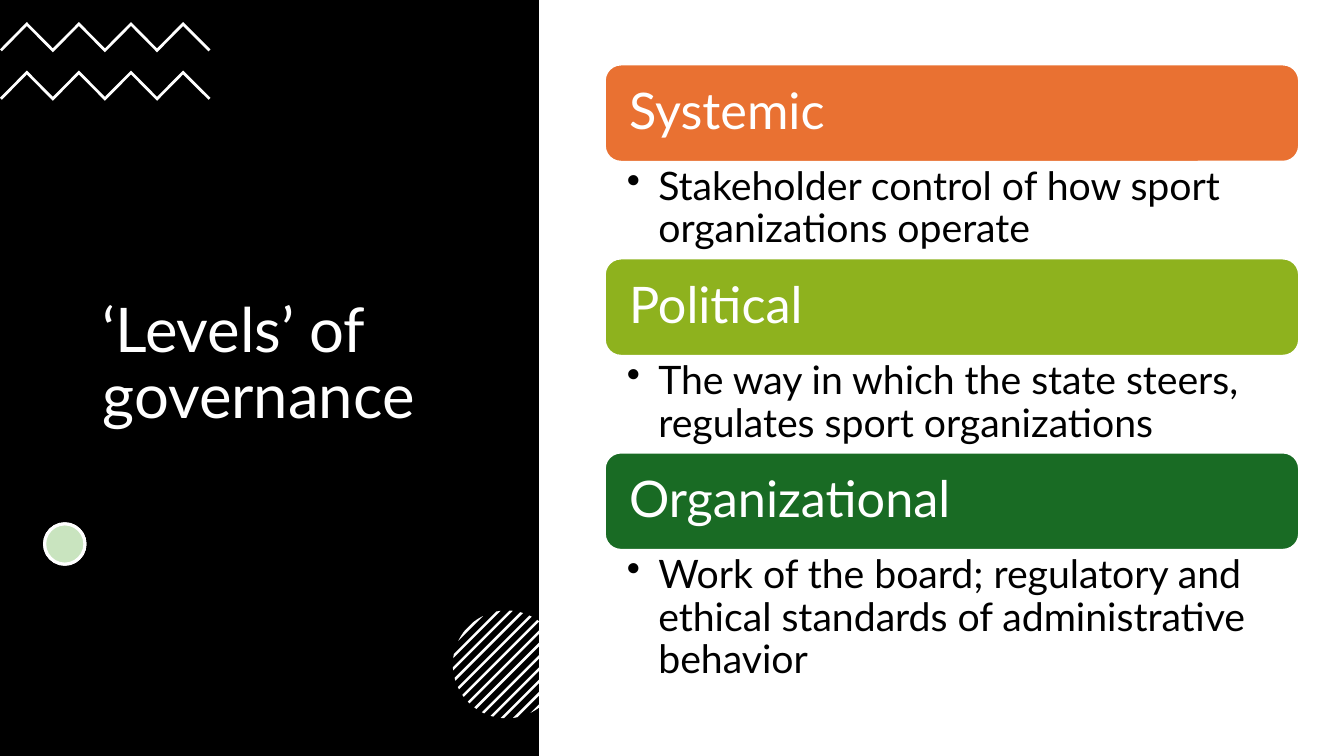
from dataclasses import dataclass
from math import acos, cos, pi, sin, sqrt

from lxml.etree import SubElement
from pptx import Presentation
from pptx.dml.color import RGBColor
from pptx.enum.shapes import MSO_SHAPE
from pptx.enum.text import MSO_ANCHOR, MSO_AUTO_SIZE, PP_ALIGN
from pptx.oxml.ns import qn
from pptx.util import Pt


@dataclass(frozen=True)
class Theme:
    font: str = "Lato"
    white: str = "FFFFFF"
    black: str = "000000"
    dot: str = "4EA72E"
    systemic: str = "E97132"
    political: str = "8EB21E"
    organizational: str = "196B24"
    title_size: float = 44
    heading_size: float = 36
    body_size: float = 28


class SlideBuilder:
    def __init__(self, slide, theme):
        self.slide = slide
        self.theme = theme

    def paint(self, shape, fill, line=None, line_width=0.0):
        shape.shadow.inherit = False
        shape.fill.solid()
        shape.fill.fore_color.rgb = RGBColor.from_string(fill)
        if line:
            shape.line.color.rgb = RGBColor.from_string(line)
            shape.line.width = Pt(line_width)
        else:
            shape.line.fill.background()

    def shape(self, kind, box, fill, line=None, line_width=0.0, opacity=100):
        shape = self.slide.shapes.add_shape(kind, *map(Pt, box))
        self.paint(shape, fill, line, line_width)
        if opacity < 100:
            color = shape._element.spPr.find(qn("a:solidFill"))[0]
            SubElement(color, qn("a:alpha"), val=str(opacity * 1000))
        return shape

    def outline(self, points, fill):
        start, *rest = [(Pt(x), Pt(y)) for x, y in points]
        builder = self.slide.shapes.build_freeform(*start)
        builder.add_line_segments(rest, close=True)
        self.paint(builder.convert_to_shape(), fill)

    def set_text(self, shape, text, size, color, insets, anchor, bullet_indent=0.0):
        frame = shape.text_frame
        frame.word_wrap = True
        frame.auto_size = MSO_AUTO_SIZE.NONE
        frame.vertical_anchor = anchor
        (frame.margin_left, frame.margin_top,
         frame.margin_right, frame.margin_bottom) = map(Pt, insets)
        paragraph = frame.paragraphs[0]
        paragraph.text = text
        paragraph.alignment = PP_ALIGN.LEFT
        paragraph.line_spacing = 0.9
        if bullet_indent:
            properties = paragraph._p.get_or_add_pPr()
            properties.set("marL", str(Pt(bullet_indent)))
            properties.set("indent", str(-Pt(bullet_indent)))
            SubElement(properties, qn("a:buChar"), char="•")
        paragraph.font.name = self.theme.font
        paragraph.font.size = Pt(size)
        paragraph.font.color.rgb = RGBColor.from_string(color)

    def title(self, text, box):
        title = self.slide.shapes.title
        title.left, title.top, title.width, title.height = map(Pt, box)
        self.set_text(title, text, self.theme.title_size, self.theme.white,
                      (7.2, 3.6, 7.2, 3.6), MSO_ANCHOR.MIDDLE)

    def zigzag(self, top):
        first_peak, step, depth, thickness = 19.2, 18.6, 18.8, 2.8
        turns = [(first_peak + step * i, top + depth * (i % 2)) for i in range(7)]
        upper = [(0, top + 19.5), *turns, (150.4, top + 19.5)]
        lower = [(1.4, top + 20.9),
                 *[(x, y + thickness) for x, y in turns],
                 (149, top + 20.9)]
        self.outline(upper + lower[::-1], self.theme.white)

    def striped_circle(self, center_x, center_y, radius):
        pitch, thickness, arc_steps = 8.8, 2.6, 6
        reach = radius * sqrt(2)
        for index in range(-6, 7):
            begin, end = [acos((pitch * index + side * thickness / 2) / reach)
                          for side in (-1, 1)]
            arc = [begin + (end - begin) * i / arc_steps
                   for i in range(arc_steps + 1)]
            angles = [pi / 4 + a for a in arc] + [pi / 4 - a for a in arc[::-1]]
            self.outline([(center_x + radius * cos(a), center_y + radius * sin(a))
                          for a in angles], self.theme.white)

    def level(self, heading, body, color, top, body_height):
        left, width, heading_height = 432, 496, 69.6
        bar = self.shape(MSO_SHAPE.ROUNDED_RECTANGLE,
                         (left, top, width, heading_height),
                         color, self.theme.white, 1.5)
        self.set_text(bar, heading, self.theme.heading_size, self.theme.white,
                      (14, 14, 14, 14), MSO_ANCHOR.MIDDLE)
        box = self.slide.shapes.add_textbox(
            *map(Pt, (left, top + heading_height, width, body_height)))
        self.set_text(box, body, self.theme.body_size, self.theme.black,
                      (15.8, 3.6, 20, 3.6), MSO_ANCHOR.TOP, bullet_indent=22.5)


def main():
    theme = Theme()
    presentation = Presentation()
    presentation.slide_width, presentation.slide_height = Pt(960), Pt(540)
    slide = presentation.slides.add_slide(presentation.slide_layouts[5])
    builder = SlideBuilder(slide, theme)

    panel = builder.shape(MSO_SHAPE.RECTANGLE, (0, 0, 385, 540), theme.black)
    slide.shapes.title._element.addprevious(panel._element)
    builder.title("‘Levels’ of governance", (66, 94.4, 252, 333.5))

    for top in (15.8, 50.4):
        builder.zigzag(top)
    for fill, opacity in ((theme.white, 100), (theme.dot, 30)):
        builder.shape(MSO_SHAPE.OVAL, (31.9, 374.2, 28.8, 28.8),
                      fill, theme.white, 2.25, opacity)
    builder.striped_circle(362, 474.6, 38.5)

    levels = [
        ("Systemic", "Stakeholder control of how sport organizations operate",
         theme.systemic, 69.1),
        ("Political",
         "The way in which the state steers, regulates sport organizations",
         theme.political, 69.1),
        ("Organizational",
         "Work of the board; regulatory and ethical standards of "
         "administrative behavior", theme.organizational, 100),
    ]
    for index, (heading, body, color, body_height) in enumerate(levels):
        builder.level(heading, body, color, 46 + 138.6 * index, body_height)

    presentation.save("out.pptx")


if __name__ == "__main__":
    main()
